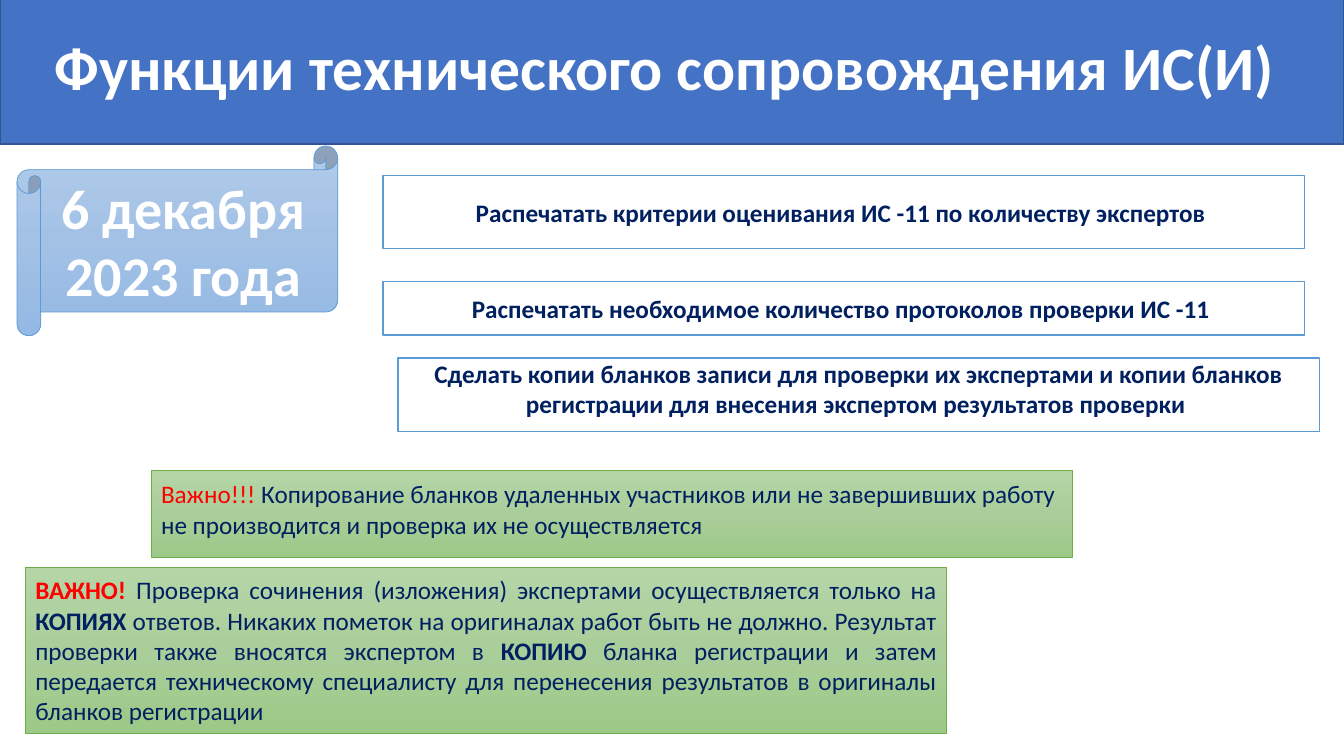
from copy import deepcopy
from dataclasses import dataclass

from pptx import Presentation
from pptx.dml.color import RGBColor
from pptx.enum.shapes import MSO_SHAPE as Shape
from pptx.enum.text import MSO_ANCHOR as Anchor, MSO_AUTO_SIZE as AutoSize, PP_ALIGN as Align
from pptx.util import Cm, Pt


@dataclass(frozen=True)
class Theme:
    font: str = "Calibri"
    title_size: int = 44
    date_size: int = 40
    body_size: int = 18
    white: str = "FFFFFF"
    navy: str = "002060"
    red: str = "FF0000"
    banner: str = "4472C4"
    banner_line: str = "325491"
    blue_line: str = "5B9BD5"
    green_line: str = "70AD47"
    blue_gradient: tuple = ("B1CBE9", "A3C1E5", "93B9E4")
    green_gradient: tuple = ("B5D5A7", "AACE9A", "9CC987")


theme = Theme()


def paint(shape, fill, line, line_width):
    """Fill with one colour, or top to bottom with three, and outline the shape."""
    if isinstance(fill, tuple):
        shape.fill.gradient()
        shape.fill.gradient_angle = 270
        last_stop = shape._element.spPr.xpath(".//a:gs")[-1]
        last_stop.addprevious(deepcopy(last_stop))
        for stop, position, color in zip(shape.fill.gradient_stops, (0, 0.5, 1), fill):
            stop.position = position
            stop.color.rgb = RGBColor.from_string(color)
    else:
        shape.fill.solid()
        shape.fill.fore_color.rgb = RGBColor.from_string(fill)
    shape.line.color.rgb = RGBColor.from_string(line)
    shape.line.width = Pt(line_width)
    shape.shadow.inherit = False


def write(shape, runs, size, align=Align.CENTER, top_margin=None):
    """Write (text, colour, bold) runs, centred vertically unless a top margin is given."""
    frame = shape.text_frame
    frame.word_wrap = True
    frame.auto_size = AutoSize.NONE
    frame.vertical_anchor = Anchor.MIDDLE
    if top_margin is not None:
        frame.vertical_anchor = Anchor.TOP
        frame.margin_top = top_margin
    paragraph = frame.paragraphs[0]
    paragraph.alignment = align
    for text, color, bold in runs:
        run = paragraph.add_run()
        run.text = text
        run.font.name = theme.font
        run.font.size = Pt(size)
        run.font.bold = bold
        run.font.color.rgb = RGBColor.from_string(color)


presentation = Presentation()
presentation.slide_width = Cm(33.87)
presentation.slide_height = Cm(19.05)
slide = presentation.slides.add_slide(presentation.slide_layouts[5])

# Title banner
title = slide.shapes.title
title.left, title.top, title.width, title.height = Cm(0), Cm(-0.05), Cm(33.87), Cm(3.68)
paint(title, theme.banner, theme.banner_line, 1)
write(title, [("Функции технического сопровождения ИС(И) ", theme.white, True)], theme.title_size)
title.text_frame.paragraphs[0].line_spacing = 0.9

# Date scroll
scroll = slide.shapes.add_shape(Shape.HORIZONTAL_SCROLL, Cm(0.43), Cm(3.68), Cm(8.08), Cm(4.78))
paint(scroll, theme.blue_gradient, theme.blue_line, 0.5)
write(scroll, [("6 декабря 2023 года", theme.white, True)], theme.date_size)

# Tasks
box_width = Cm(23.22)
tasks = [
    (9.65, 4.42, 1.85, None, "Распечатать критерии оценивания ИС -11 по количеству экспертов "),
    (9.65, 7.09, 1.35, None, "Распечатать необходимое количество протоколов проверки ИС -11 "),
    (10.03, 9.02, 1.85, Cm(0), "Сделать копии бланков записи для проверки их экспертами и копии "
     "бланков регистрации для внесения экспертом результатов проверки "),
]
for left, top, height, top_margin, text in tasks:
    task = slide.shapes.add_shape(Shape.RECTANGLE, Cm(left), Cm(top), box_width, Cm(height))
    paint(task, theme.white, theme.blue_line, 1)
    write(task, [(text, theme.navy, True)], theme.body_size, top_margin=top_margin)

# Warnings
warnings = [
    (3.81, 11.86, 2.18, Align.LEFT, Cm(0.2), [
        ("Важно!!! ", theme.red, False),
        ("Копирование бланков удаленных участников или не завершивших работу "
         "не производится и проверка их не осуществляется", theme.navy, False),
    ]),
    (0.64, 14.3, 4.17, Align.JUSTIFY, None, [
        ("ВАЖНО! ", theme.red, True),
        ("Проверка сочинения (изложения) экспертами осуществляется только на ", theme.navy, False),
        ("КОПИЯХ", theme.navy, True),
        (" ответов. Никаких пометок на оригиналах работ быть не должно. "
         "Результат проверки также вносятся экспертом в ", theme.navy, False),
        ("КОПИЮ", theme.navy, True),
        (" бланка регистрации и затем передается техническому специалисту "
         "для перенесения результатов в оригиналы бланков регистрации", theme.navy, False),
    ]),
]
for left, top, height, align, top_margin, runs in warnings:
    warning = slide.shapes.add_shape(Shape.RECTANGLE, Cm(left), Cm(top), box_width, Cm(height))
    paint(warning, theme.green_gradient, theme.green_line, 0.5)
    write(warning, runs, theme.body_size, align, top_margin)

presentation.save("out.pptx")
